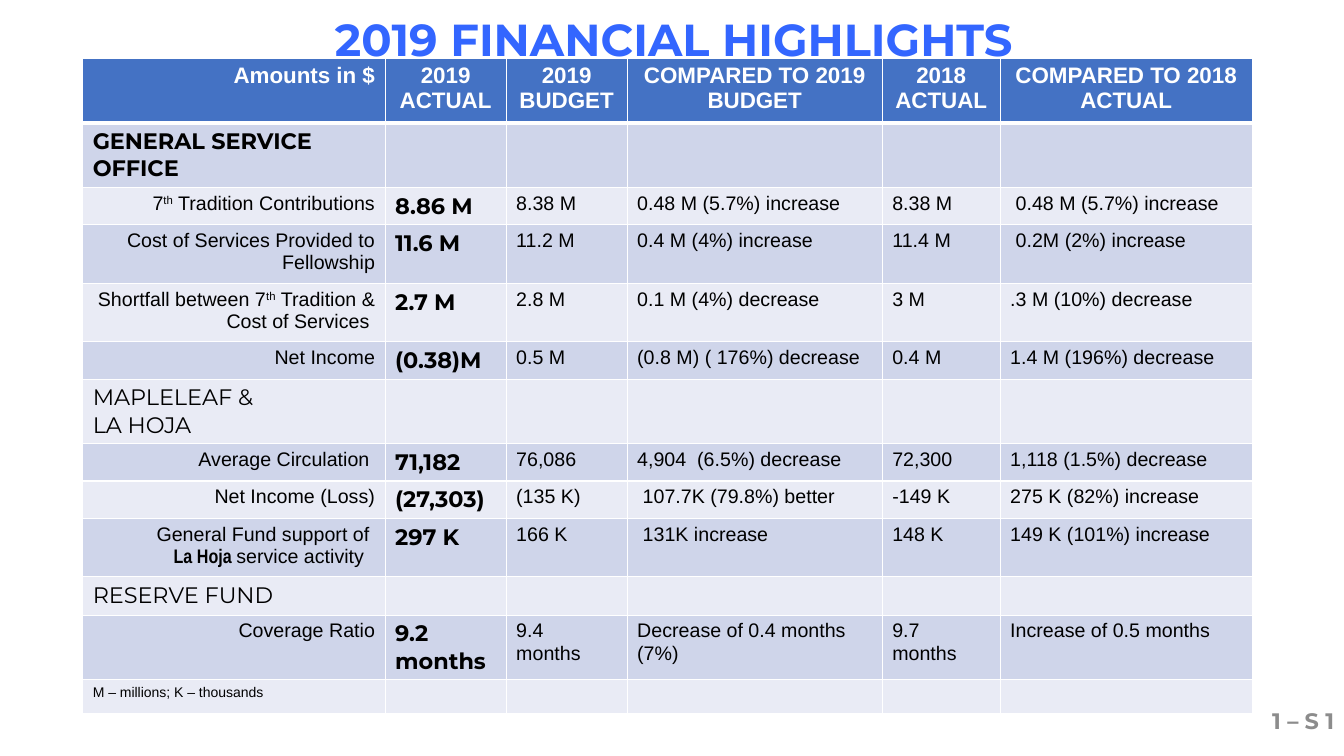
"""Build the 2019 financial highlights slide."""
from lxml import etree
from pptx import Presentation
from pptx import util as u
from pptx.dml.color import RGBColor
from pptx.enum import text
from pptx.oxml import ns

TITLE = "2019 FINANCIAL HIGHLIGHTS"
PAGE_LABEL = "1 – S 1"
HEADER = ["Amounts in $", "2019\nACTUAL", "2019 BUDGET", "COMPARED TO 2019 BUDGET",
          "2018\nACTUAL", "COMPARED TO 2018 ACTUAL"]
ROWS = [
    ["GENERAL SERVICE OFFICE"],
    ["7^th^ Tradition Contributions", "8.86 M", "8.38 M", "0.48 M (5.7%) increase",
     "8.38 M", " 0.48 M (5.7%) increase"],
    ["Cost of Services Provided to Fellowship", "11.6 M", "11.2 M", "0.4 M (4%) increase",
     "11.4 M", " 0.2M (2%) increase"],
    ["Shortfall between 7^th^ Tradition & Cost of Services ", "2.7 M", "2.8 M",
     "0.1 M (4%) decrease", "3 M", ".3 M (10%) decrease"],
    ["Net Income", "(0.38)M", "0.5 M", "(0.8 M) ( 176%) decrease", "0.4 M",
     "1.4 M (196%) decrease"],
    ["MAPLELEAF &\nLA HOJA"],
    ["Average Circulation ", "71,182", "76,086", "4,904  (6.5%) decrease", "72,300",
     "1,118 (1.5%) decrease"],
    ["Net Income (Loss)", "(27,303)", "(135 K)", " 107.7K (79.8%) better", "-149 K",
     "275 K (82%) increase"],
    ["General Fund support of \n~La Hoja ~service activity  ", "297 K", "166 K",
     " 131K increase", "148 K", "149 K (101%) increase"],
    ["RESERVE FUND"],
    ["Coverage Ratio", "9.2 months", "9.4\nmonths", "Decrease of 0.4 months\n(7%)",
     "9.7\nmonths", "Increase of 0.5 months"],
    ["M – millions; K – thousands"],
]
COLUMN_WIDTHS = [3, 1.2, 1.2, 2.53, 1.17, 2.5]
ROW_HEIGHTS = [0.64, 0.64, 0.37, 0.58, 0.58, 0.37, 0.64, 0.37, 0.37, 0.58, 0.38, 0.64, 0.34]

BLUE = RGBColor(0x33, 0x66, 0xFF)
HEADER_BLUE = RGBColor(0x44, 0x72, 0xC4)
BANDS = [RGBColor(0xE9, 0xEB, 0xF5), RGBColor(0xCF, 0xD5, 0xEA)]
WHITE = RGBColor(0xFF, 0xFF, 0xFF)
BLACK = RGBColor(0, 0, 0)
GREY = RGBColor(0x8C, 0x8C, 0x8C)

LEFT, CENTER, RIGHT = text.PP_ALIGN.LEFT, text.PP_ALIGN.CENTER, text.PP_ALIGN.RIGHT


def style(size, name, bold, color):
    return {"size": u.Pt(size), "name": name, "bold": bold, "color": color}


TITLE_STYLE = style(32, "Montserrat", True, BLUE)
PAGE_STYLE = style(16, "Montserrat", True, GREY)
HEADER_STYLE = style(16, "Arial", True, WHITE)
STRONG = style(16, "Montserrat", True, BLACK)
SECTION = style(16, "Montserrat", False, BLACK)
BODY = style(14, "Arial", False, BLACK)
NOTE = style(10, "Arial", False, BLACK)
NARROW = {"name": "Arial Narrow", "bold": True}


def add_run(paragraph, words, formats):
    run = paragraph.add_run()
    run.text = words
    for key, value in formats.items():
        if key == "color":
            run.font.color.rgb = value
        else:
            setattr(run.font, key, value)
    return run


def write(frame, words, formats, alignment):
    """Write lines; ^ marks superscript and ~ marks narrow bold."""
    for number, line in enumerate(words.split("\n")):
        paragraph = frame.add_paragraph() if number else frame.paragraphs[0]
        paragraph.alignment = alignment
        for raised, part in enumerate(line.split("^")):
            for narrow, piece in enumerate(part.split("~")):
                if not piece:
                    continue
                run = add_run(paragraph, piece, formats | NARROW if narrow % 2 else formats)
                if raised % 2:
                    run.font._element.set("baseline", "30000")


def add_borders(cell, bottom):
    properties = cell._tc.get_or_add_tcPr()
    for place, (side, points) in enumerate([("L", 1), ("R", 1), ("T", 1), ("B", bottom)]):
        line = etree.Element(ns.qn(f"a:ln{side}"), w=str(u.Pt(points)))
        fill = etree.SubElement(line, ns.qn("a:solidFill"))
        etree.SubElement(fill, ns.qn("a:srgbClr"), val=str(WHITE))
        properties.insert(place, line)


def cell_style(row, column):
    if row == 0:
        return HEADER_STYLE, CENTER if column else RIGHT
    if row == len(ROWS):
        return NOTE, LEFT
    if len(ROWS[row - 1]) == 1:
        return STRONG if row == 1 else SECTION, LEFT
    if column == 1:
        return STRONG, LEFT
    return BODY, LEFT if column else RIGHT


def add_highlights(slide):
    table = slide.shapes.add_table(
        len(ROW_HEIGHTS), len(COLUMN_WIDTHS), u.Inches(0.82), u.Inches(0.58),
        u.Inches(sum(COLUMN_WIDTHS)), u.Inches(sum(ROW_HEIGHTS))).table
    for column, width in zip(table.columns, COLUMN_WIDTHS):
        column.width = u.Inches(width)
    for row, height in enumerate(ROW_HEIGHTS):
        table.rows[row].height = u.Inches(height)
        words = ([HEADER] + ROWS)[row]
        for column in range(len(COLUMN_WIDTHS)):
            cell = table.cell(row, column)
            cell.fill.solid()
            cell.fill.fore_color.rgb = BANDS[row % 2] if row else HEADER_BLUE
            add_borders(cell, 1 if row else 3)
            if column < len(words):
                write(cell.text_frame, words[column], *cell_style(row, column))
            else:
                paragraph = cell.text_frame.paragraphs[0]
                etree.SubElement(paragraph._p, ns.qn("a:endParaRPr"), sz="1000")


def main():
    presentation = Presentation()
    presentation.slide_width, presentation.slide_height = u.Inches(13.33), u.Inches(7.5)
    slide = presentation.slides.add_slide(presentation.slide_layouts[5])

    title = slide.shapes.title
    title.left, title.top = u.Inches(0.02), 0
    title.width, title.height = presentation.slide_width, u.Inches(0.83)
    frame = title.text_frame
    frame.auto_size = text.MSO_AUTO_SIZE.NONE
    frame.vertical_anchor = text.MSO_ANCHOR.MIDDLE
    write(frame, TITLE, TITLE_STYLE, CENTER)
    frame.paragraphs[0].line_spacing = 0.9

    add_highlights(slide)

    label = slide.shapes.add_textbox(u.Inches(12.08), u.Inches(6.95), u.Inches(1.25), u.Inches(0.4))
    label.text_frame.word_wrap = True
    label.text_frame.vertical_anchor = text.MSO_ANCHOR.MIDDLE
    write(label.text_frame, PAGE_LABEL, PAGE_STYLE, RIGHT)
    presentation.save("out.pptx")


if __name__ == "__main__":
    main()
